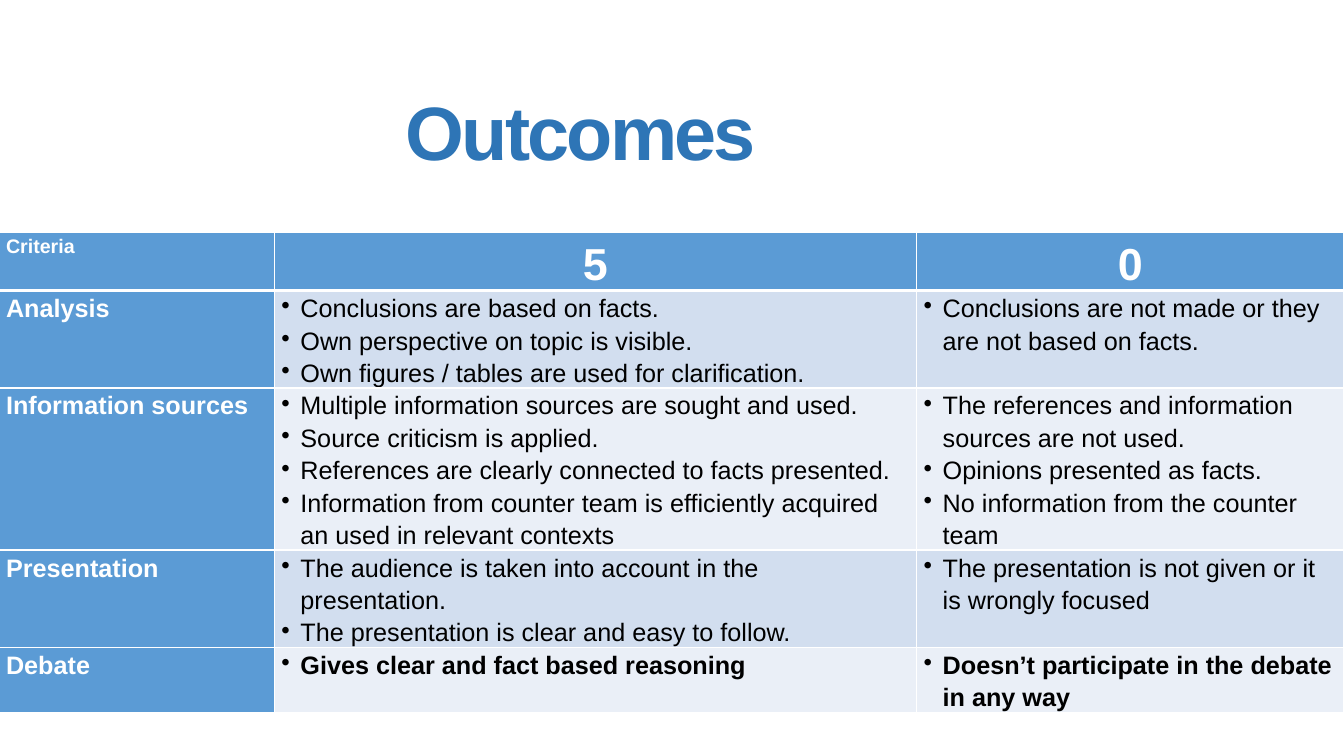
"""Build the "Outcomes" slide: a debate grading table under a title."""
import dataclasses
import typing

import lxml.etree
import pptx
import pptx.dml.color
import pptx.enum.text
import pptx.oxml.ns
import pptx.util


@dataclasses.dataclass(frozen=True)
class Theme:
    font: str = "Arial"
    title: str = "2E75B6"
    header: str = "5B9BD5"
    bands: tuple[str, str] = ("D2DEEF", "EAEFF7")
    light: str = "FFFFFF"
    dark: str = "000000"
    title_size: int = 54
    corner_size: int = 14
    score_size: int = 32
    body_size: int = 18


@dataclasses.dataclass(frozen=True)
class Criterion:
    name: str
    full_marks: tuple[str, ...]
    no_marks: tuple[str, ...]
    lines: int
    bold: bool = False


THEME = Theme()
WIDTH = pptx.util.Inches(13.33)
HEIGHT = pptx.util.Inches(7.5)
COLUMN_SHARES = (0.2048, 0.4779, 0.3181)
TABLE_TOP = 0.308
HEADER_SHARE = 0.076
LINE_SHARE = 0.0429
CRITERIA = (
    Criterion(
        "Analysis",
        (
            "Conclusions are based on facts.",
            "Own perspective on topic is visible.",
            "Own figures / tables are used for clarification.",
        ),
        ("Conclusions are not made or they are not based on facts.",),
        lines=3,
    ),
    Criterion(
        "Information sources",
        (
            "Multiple information sources are sought and used.",
            "Source criticism is applied.",
            "References are clearly connected to facts presented.",
            "Information from counter team is efficiently acquired an used in relevant contexts",
        ),
        (
            "The references and information sources are not used.",
            "Opinions presented as facts.",
            "No information from the counter team",
        ),
        lines=5,
    ),
    Criterion(
        "Presentation",
        (
            "The audience is taken into account in the presentation.",
            "The presentation is clear and easy to follow.",
        ),
        ("The presentation is not given or it is wrongly focused",),
        lines=3,
    ),
    Criterion(
        "Debate",
        ("Gives clear and fact based reasoning",),
        ("Doesn’t participate in the debate in any way",),
        lines=2,
        bold=True,
    ),
)


def style_font(paragraph: typing.Any, size: int, color: str, bold: bool) -> None:
    """Set the font of a whole paragraph."""
    font = paragraph.font
    font.name = THEME.font
    font.size = pptx.util.Pt(size)
    font.bold = bold
    font.color.rgb = pptx.dml.color.RGBColor.from_string(color)


def add_bullet(paragraph: typing.Any) -> None:
    """Give a paragraph a hanging round bullet."""
    properties = paragraph._p.get_or_add_pPr()
    indent = pptx.util.Inches(0.19)
    properties.set("marL", str(indent))
    properties.set("indent", str(-indent))
    bullet = lxml.etree.SubElement(properties, pptx.oxml.ns.qn("a:buChar"))
    bullet.set("char", "•")


def add_borders(cell: typing.Any, top: int, bottom: int) -> None:
    """Draw light borders, with the given top and bottom widths in points."""
    properties = cell._tc.get_or_add_tcPr()
    widths = {"L": 1, "R": 1, "T": top, "B": bottom}
    for index, (side, width) in enumerate(widths.items()):
        line = lxml.etree.Element(pptx.oxml.ns.qn(f"a:ln{side}"), w=str(pptx.util.Pt(width)))
        fill = lxml.etree.SubElement(line, pptx.oxml.ns.qn("a:solidFill"))
        lxml.etree.SubElement(fill, pptx.oxml.ns.qn("a:srgbClr"), val=THEME.light)
        properties.insert(index, line)


def fill_cell(
    cell: typing.Any,
    texts: tuple[str, ...],
    fill: str,
    size: int = THEME.body_size,
    color: str = THEME.light,
    bold: bool = True,
    bulleted: bool = False,
    centered: bool = False,
) -> None:
    """Fill one cell with a background and one paragraph per text."""
    cell.margin_left = cell.margin_right = pptx.util.Inches(0.07)
    cell.margin_top = cell.margin_bottom = 0
    cell.fill.solid()
    cell.fill.fore_color.rgb = pptx.dml.color.RGBColor.from_string(fill)
    cell.text = "\n".join(texts)
    for paragraph in cell.text_frame.paragraphs:
        paragraph.line_spacing = 1.15
        if centered:
            paragraph.alignment = pptx.enum.text.PP_ALIGN.CENTER
        if bulleted:
            add_bullet(paragraph)
        style_font(paragraph, size, color, bold)


def add_title(slide: typing.Any) -> None:
    """Place and format the slide title."""
    title = slide.shapes.title
    title.left, title.top = int(WIDTH * 0.302), int(HEIGHT * 0.065)
    title.width, title.height = int(WIDTH * 0.512), int(HEIGHT * 0.167)
    frame = title.text_frame
    frame.text = "Outcomes"
    frame.auto_size = pptx.enum.text.MSO_AUTO_SIZE.NONE
    frame.vertical_anchor = pptx.enum.text.MSO_ANCHOR.BOTTOM
    frame.margin_left = frame.margin_right = frame.margin_top = frame.margin_bottom = 0
    paragraph = frame.paragraphs[0]
    paragraph.alignment = pptx.enum.text.PP_ALIGN.LEFT
    paragraph.line_spacing = 0.8
    style_font(paragraph, THEME.title_size, THEME.title, True)
    paragraph.runs[0]._r.get_or_add_rPr().set("spc", "-200")


def add_grading_table(slide: typing.Any) -> None:
    """Add the table of criteria with the two score columns."""
    row_shares = [HEADER_SHARE, *(LINE_SHARE * criterion.lines for criterion in CRITERIA)]
    table = slide.shapes.add_table(
        len(row_shares), len(COLUMN_SHARES), pptx.util.Inches(-0.01), int(HEIGHT * TABLE_TOP),
        int(WIDTH * sum(COLUMN_SHARES)), int(HEIGHT * sum(row_shares)),
    ).table
    table.first_row = table.horz_banding = False
    for column, share in zip(table.columns, COLUMN_SHARES):
        column.width = int(WIDTH * share)
    for row, share in zip(table.rows, row_shares):
        row.height = int(HEIGHT * share)

    fill_cell(table.cell(0, 0), ("Criteria",), THEME.header, THEME.corner_size)
    for column, score in enumerate(("5", "0"), start=1):
        fill_cell(table.cell(0, column), (score,), THEME.header, THEME.score_size, centered=True)
    for row, criterion in enumerate(CRITERIA, start=1):
        fill_cell(table.cell(row, 0), (criterion.name,), THEME.header)
        band = THEME.bands[(row - 1) % 2]
        for column, texts in enumerate((criterion.full_marks, criterion.no_marks), start=1):
            fill_cell(table.cell(row, column), texts, band, color=THEME.dark,
                      bold=criterion.bold, bulleted=True)
    for row_index, row in enumerate(table.rows):
        for cell in row.cells:
            add_borders(cell, top=3 if row_index == 1 else 1, bottom=3 if row_index == 0 else 1)


def main() -> None:
    """Create and save the presentation."""
    presentation = pptx.Presentation()
    presentation.slide_width, presentation.slide_height = WIDTH, HEIGHT
    slide = presentation.slides.add_slide(presentation.slide_layouts[5])
    add_title(slide)
    add_grading_table(slide)
    presentation.save("out.pptx")


if __name__ == "__main__":
    main()
